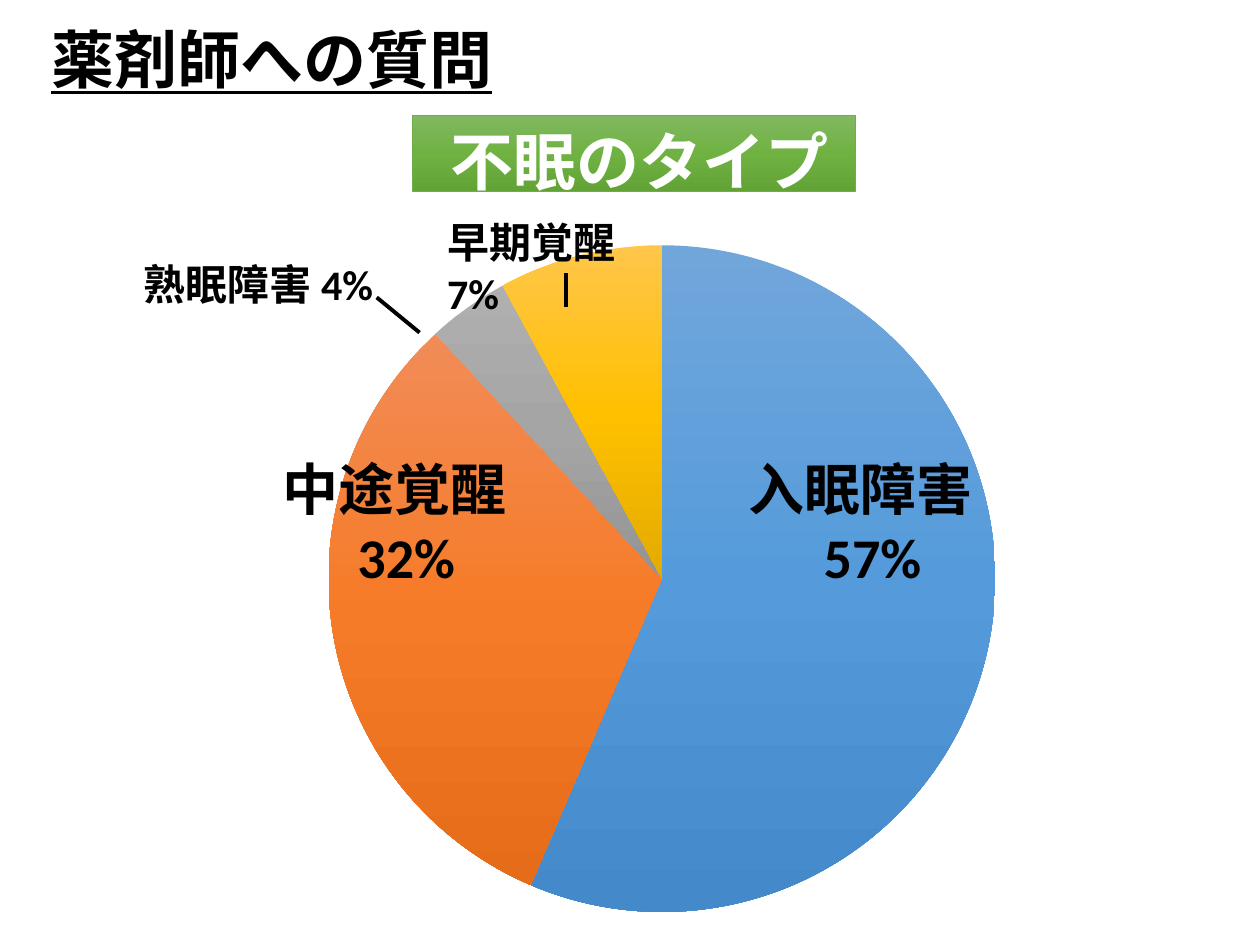
import copy
import pptx
import pptx.chart.data
import pptx.dml.color
import pptx.enum.chart
import pptx.enum.shapes
import pptx.enum.text
import pptx.oxml
import pptx.oxml.ns
import pptx.util

RGBColor = pptx.dml.color.RGBColor
BLACK = RGBColor(0x00, 0x00, 0x00)
WHITE = RGBColor(0xFF, 0xFF, 0xFF)
GREEN_LINE = RGBColor(0x70, 0xAD, 0x47)
GREENS = [RGBColor(0x81, 0xB8, 0x61), RGBColor(0x6F, 0xB2, 0x42), RGBColor(0x62, 0xA3, 0x36)]
SLICES = [
    [RGBColor(0x71, 0xA6, 0xDB), RGBColor(0x55, 0x9B, 0xDB), RGBColor(0x44, 0x8A, 0xCA)],
    [RGBColor(0xF1, 0x8C, 0x57), RGBColor(0xF6, 0x7B, 0x28), RGBColor(0xE5, 0x6C, 0x19)],
    [RGBColor(0xAF, 0xAF, 0xAF), RGBColor(0xA5, 0xA5, 0xA5), RGBColor(0x93, 0x93, 0x93)],
    [RGBColor(0xFF, 0xC6, 0x4B), RGBColor(0xFF, 0xC0, 0x00), RGBColor(0xE3, 0xAB, 0x00)],
]
FONT = "Calibri"
LEFT = pptx.enum.text.PP_ALIGN.LEFT
CENTER = pptx.enum.text.PP_ALIGN.CENTER

deck = pptx.Presentation()
deck.slide_width = pptx.util.Inches(10)
deck.slide_height = pptx.util.Inches(7.5)
page = deck.slides.add_slide(deck.slide_layouts[6])
column = deck.slide_width / 100
row = deck.slide_height / 100


def place(left, top, width, height):
    return [round(n * unit) for n, unit in zip((left, top, width, height), (column, row) * 2)]


def shade(fill, holder, colors):
    fill.gradient()
    fill.gradient_angle = 270
    stops = list(holder.iter(pptx.oxml.ns.qn("a:gsLst")))[-1]
    middle = copy.deepcopy(stops[0])
    middle.set("pos", "50000")
    stops.insert(1, middle)
    for stop, color in zip(fill.gradient_stops, colors):
        stop.color.rgb = color


data = pptx.chart.data.CategoryChartData()
data.categories = ["1", "2", "3", "4"]
data.add_series("Series 1", [57, 32, 4, 8])
chart = page.shapes.add_chart(
    pptx.enum.chart.XL_CHART_TYPE.PIE, *place(13.7, 23.73, 76.9, 74.27), data
).chart
chart.has_legend = False
chart.has_title = False
chart.font.name = FONT
chart.font.size = pptx.util.Pt(10)
chart.font.color.rgb = BLACK
chart.plots[0].vary_by_categories = True
series = chart.plots[0].series[0]
for index, colors in enumerate(SLICES):
    point = series.points[index]
    shade(point.format.fill, series._element, colors)
    point.format.line.fill.background()

plot_area = chart._chartSpace.chart.plotArea
for old in plot_area.findall(pptx.oxml.ns.qn("c:layout")):
    plot_area.remove(old)
plot_area.insert(0, pptx.oxml.parse_xml(
    f'<c:layout {pptx.oxml.ns.nsdecls("c")}><c:manualLayout>'
    '<c:layoutTarget val="inner"/><c:xMode val="edge"/><c:yMode val="edge"/>'
    '<c:x val="0.16"/><c:y val="0.03"/><c:w val="0.69"/><c:h val="0.95"/>'
    '</c:manualLayout></c:layout>'
))

banner = page.shapes.add_shape(
    pptx.enum.shapes.MSO_SHAPE.RECTANGLE, *place(32.7, 12.27, 35.2, 8)
)
banner.shadow.inherit = False
shade(banner.fill, banner._element, GREENS)
banner.line.color.rgb = GREEN_LINE
banner.line.width = pptx.util.Pt(0.5)

for start_x, start_y, end_x, end_y in [(29.9, 31.47, 33.3, 35.2), (44.9, 28.93, 44.9, 32.53)]:
    leader = page.shapes.add_connector(
        pptx.enum.shapes.MSO_CONNECTOR.STRAIGHT, *place(start_x, start_y, end_x, end_y)
    )
    leader.line.color.rgb = BLACK
    leader.line.width = pptx.util.Pt(2.25)
    leader._element.spPr.append(
        pptx.oxml.parse_xml(f'<a:effectLst {pptx.oxml.ns.nsdecls("a")}/>')
    )

labels = [
    ((34.5, 22.27, 20.6, 6.67), "早期覚醒\v7%", 24, BLACK),
    ((10.4, 26.67, 22.9, 6.67), "熟眠障害 4%", 24, BLACK),
    ((34.8, 12.27, 33.2, 9.47), "不眠のタイプ", 36, WHITE),
    ((58.4, 47.47, 21.7, 15.73), "入眠障害\n57%", 32, BLACK),
    ((21.4, 47.47, 21.7, 15.73), "中途覚醒\n32%", 32, BLACK),
    ((3.1, 1.47, 37.5, 9.47), "薬剤師への質問", 36, BLACK),
]
for spot, words, size, color in labels:
    box = page.shapes.add_textbox(*place(*spot))
    box.text_frame.word_wrap = True
    box.text_frame.auto_size = pptx.enum.text.MSO_AUTO_SIZE.SHAPE_TO_FIT_TEXT
    box.text_frame.text = words
    for number, para in enumerate(box.text_frame.paragraphs):
        para.alignment = CENTER if number else LEFT
        for span in para.runs:
            span.font.name = FONT
            span.font.size = pptx.util.Pt(size)
            span.font.bold = True
            span.font.color.rgb = color

title = box.text_frame
title.word_wrap = False
title.paragraphs[0].runs[0].font.underline = True

deck.save("out.pptx")
